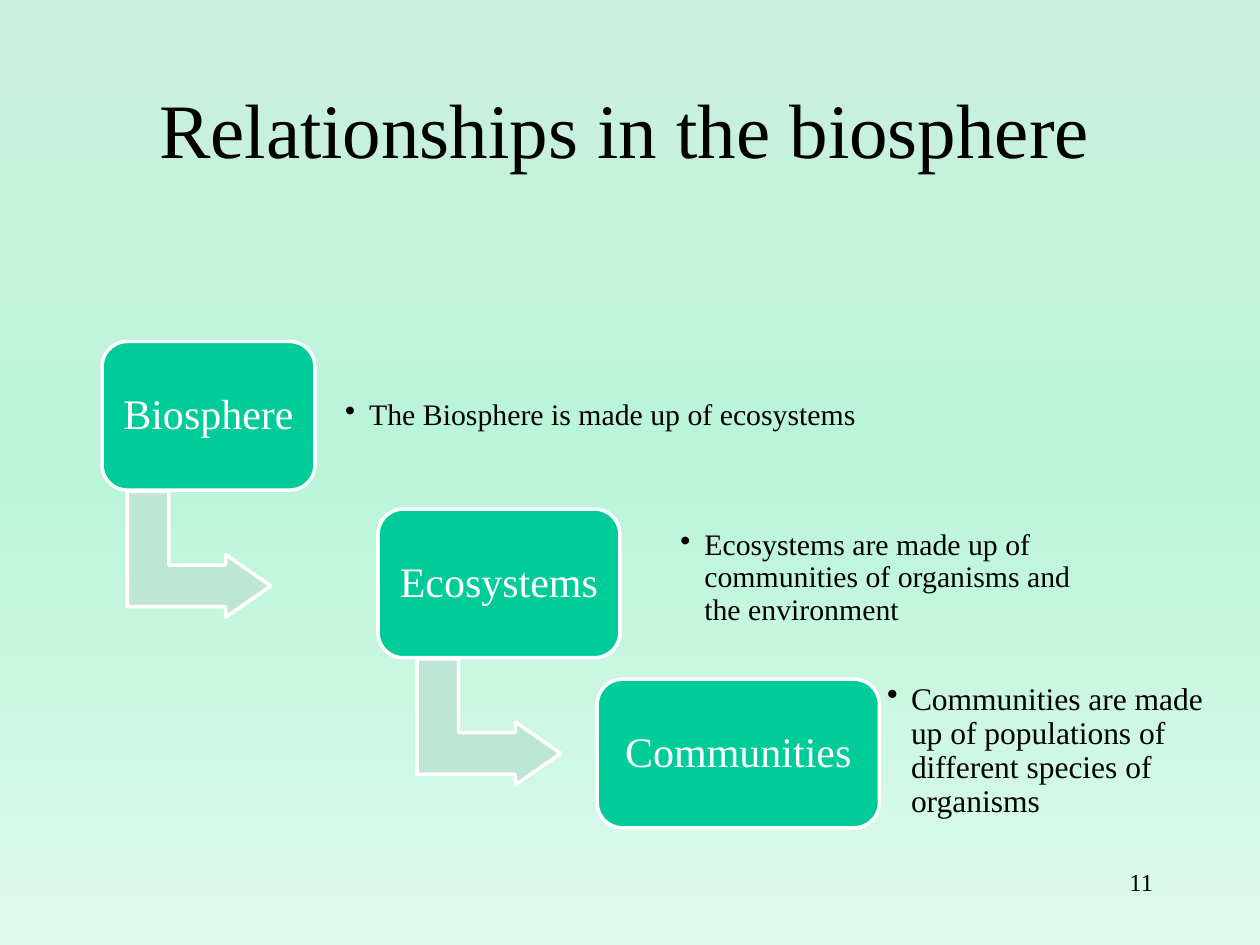
"""Build the slide on relationships in the biosphere."""
import copy

import pptx
import pptx.dml.color
import pptx.enum.shapes
import pptx.enum.text
import pptx.oxml.ns
import pptx.util
from lxml import etree
from pptx.util import Inches

FONT = "Times New Roman"
BLACK, WHITE, GREEN, PALE_GREEN = "000000", "FFFFFF", "00CC99", "BDE7D4"
BACKGROUND_STOPS = [(0, "CCEEDF"), (0.5, "BAF5DA"), (1, "DEF9EC")]
BOX_HEIGHT = 1.18

# label, box (left, top, width), description, its place, inset and size
LEVELS = [
    ("Biosphere", (0.81, 2.71, 1.69),
     "The Biosphere is made up of ecosystems",
     (2.65, 2.82, 5.83, 0.96), 0.09, 17),
    ("Ecosystems", (3, 4.04, 1.92),
     "Ecosystems are made up of communities of organisms and the environment",
     (5.31, 4.11, 3.62, 0.96), 0.09, 17),
    ("Communities", (4.74, 5.39, 2.24),
     "Communities are made up of populations of different species of organisms",
     (6.97, 5.38, 2.82, 1.16), 0.07, 18),
]
ARROWS = [(1.08, 3.83), (3.38, 5.16)]


def rgb(value):
    """Return the colour for a hex string."""
    return pptx.dml.color.RGBColor.from_string(value)


def set_background(slide):
    """Fill the background with a gradient running from top to bottom."""
    fill = slide.background.fill
    fill.gradient()
    fill.gradient_angle = 270
    stop_list = slide.element.find(".//" + pptx.oxml.ns.qn("a:gsLst"))
    stop_list.append(copy.deepcopy(stop_list[0]))
    for stop, (position, color) in zip(fill.gradient_stops, BACKGROUND_STOPS):
        stop.position = position
        stop.color.rgb = rgb(color)


def write_text(shape, text, size, color, alignment, inset=None):
    """Write one wrapped paragraph into a shape and return it."""
    frame = shape.text_frame
    frame.word_wrap = True
    frame.auto_size = pptx.enum.text.MSO_AUTO_SIZE.NONE
    if inset is not None:
        frame.margin_left = frame.margin_right = Inches(inset)
        frame.margin_top = frame.margin_bottom = Inches(inset)
    frame.text = text
    paragraph = frame.paragraphs[0]
    paragraph.alignment = alignment
    paragraph.font.name = FONT
    paragraph.font.size = pptx.util.Pt(size)
    paragraph.font.color.rgb = rgb(color)
    return paragraph


def set_title(slide, text):
    """Place and format the title."""
    title = slide.shapes.title
    title.left, title.top = Inches(0.67), Inches(0)
    title.width, title.height = Inches(8.58), Inches(2.02)
    write_text(title, text, 44, BLACK, pptx.enum.text.PP_ALIGN.CENTER)
    title.text_frame.vertical_anchor = pptx.enum.text.MSO_ANCHOR.MIDDLE


def add_outlined_shape(slide, kind, place, fill, adjustments):
    """Add a filled preset shape with a white outline."""
    shape = slide.shapes.add_shape(kind, *map(Inches, place))
    shape.shadow.inherit = False
    shape.fill.solid()
    shape.fill.fore_color.rgb = rgb(fill)
    shape.line.color.rgb = rgb(WHITE)
    shape.line.width = pptx.util.Pt(2)
    for index, value in enumerate(adjustments):
        shape.adjustments[index] = value
    return shape


def add_arrow(slide, left, top):
    """Add a bent arrow leading down and to the right."""
    arrow = add_outlined_shape(
        slide, pptx.enum.shapes.MSO_SHAPE.BENT_UP_ARROW,
        (left, top, 1, 1.14), PALE_GREEN, (0.33, 0.25, 0.36))
    arrow.rotation = 90


def add_level_box(slide, label, left, top, width):
    """Add the rounded box that names a level."""
    box = add_outlined_shape(
        slide, pptx.enum.shapes.MSO_SHAPE.ROUNDED_RECTANGLE,
        (left, top, width, BOX_HEIGHT), GREEN, (0.17,))
    box.text_frame.vertical_anchor = pptx.enum.text.MSO_ANCHOR.MIDDLE
    paragraph = write_text(box, label, 24, WHITE,
                           pptx.enum.text.PP_ALIGN.CENTER, 0.1)
    paragraph.line_spacing = 0.9


def add_description(slide, text, place, inset, size):
    """Add a bulleted description."""
    box = slide.shapes.add_textbox(*map(Inches, place))
    box.text_frame.vertical_anchor = pptx.enum.text.MSO_ANCHOR.MIDDLE
    paragraph = write_text(box, text, size, BLACK,
                           pptx.enum.text.PP_ALIGN.LEFT, inset)
    paragraph.level = 1
    paragraph.line_spacing = 0.9
    properties = paragraph._p.get_or_add_pPr()
    properties.set("marL", str(Inches(0.19)))
    properties.set("indent", str(Inches(-0.19)))
    bullet = etree.Element(pptx.oxml.ns.qn("a:buChar"), char="•")
    properties.find(pptx.oxml.ns.qn("a:lnSpc")).addnext(bullet)


def add_page_number(slide, text):
    """Add the page number at the bottom right."""
    box = slide.shapes.add_textbox(*map(Inches, (7.17, 6.83, 2.08, 0.5)))
    write_text(box, text, 14, BLACK, pptx.enum.text.PP_ALIGN.RIGHT)


def main():
    """Build and save the presentation."""
    presentation = pptx.Presentation()
    presentation.slide_width = Inches(10)
    presentation.slide_height = Inches(7.5)
    slide = presentation.slides.add_slide(presentation.slide_layouts[5])
    set_background(slide)
    set_title(slide, "Relationships in the biosphere")
    for left, top in ARROWS:
        add_arrow(slide, left, top)
    for label, box_place, text, text_place, inset, size in LEVELS:
        add_level_box(slide, label, *box_place)
        add_description(slide, text, text_place, inset, size)
    add_page_number(slide, "11")
    presentation.save("out.pptx")


if __name__ == "__main__":
    main()
